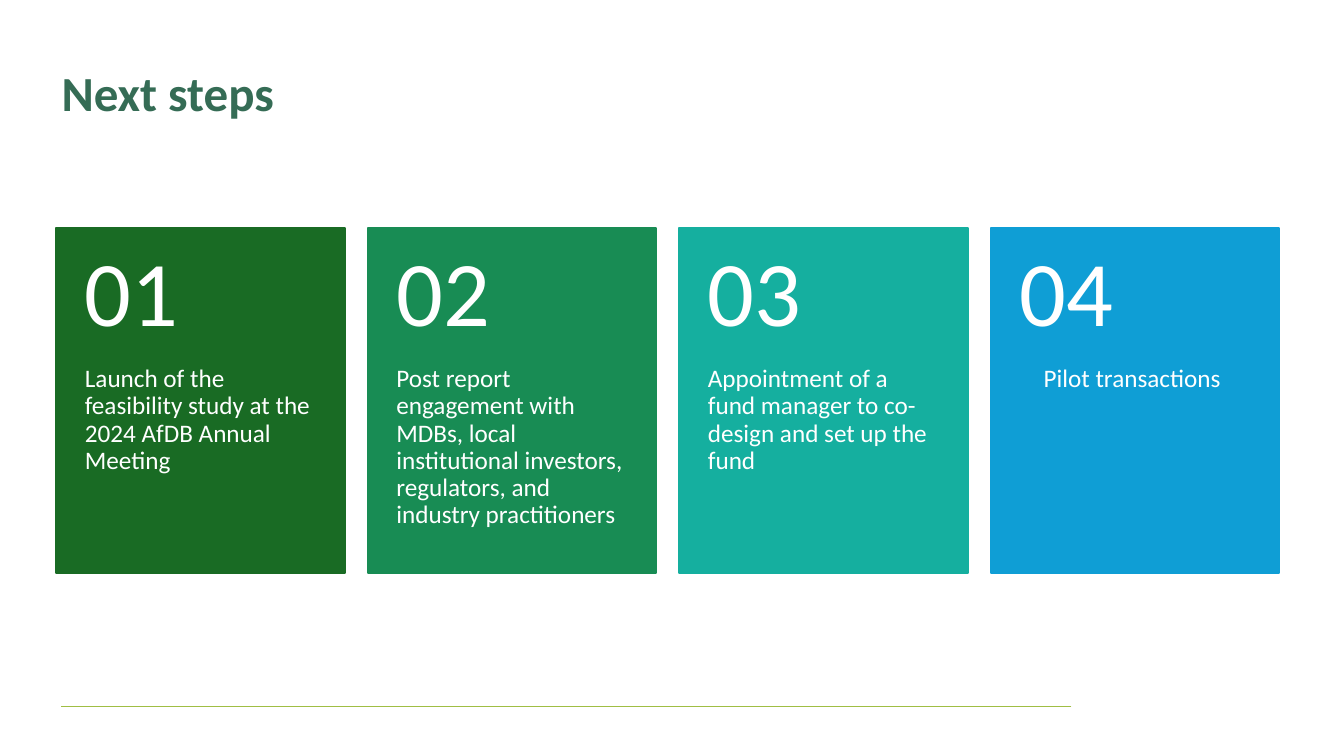
from dataclasses import dataclass
from lxml import etree
from pptx import Presentation
from pptx import util as u
from pptx.dml.color import RGBColor as Rgb
from pptx.enum import shapes, text


@dataclass
class Theme:
    font: str = "Calibri"
    title: str = "356C55"
    rule: str = "A0BE44"
    white: str = "FFFFFF"
    cards: tuple = ("196B24", "188C54", "15AF9F", "0F9ED5")
    head: int = 35
    digit: int = 66
    body: int = 18


theme = Theme()


def write(frame, words, size, color, pads, anchor, align, bold=False):
    frame.word_wrap = True
    frame.auto_size = text.MSO_AUTO_SIZE.NONE
    frame.vertical_anchor = anchor
    frame.margin_left = frame.margin_right = u.Cm(pads[0])
    frame.margin_top, frame.margin_bottom = u.Cm(pads[1]), u.Cm(pads[2])
    para = frame.paragraphs[0]
    para.alignment = align
    para.line_spacing = 0.9
    run = para.add_run()
    run.text = words
    run.font.name = theme.font
    run.font.size = u.Pt(size)
    run.font.bold = bold
    run.font.color.rgb = Rgb.from_string(color)


deck = Presentation()
deck.slide_width, deck.slide_height = u.Cm(33.87), u.Cm(19.05)
slide = deck.slides.add_slide(deck.slide_layouts[5])
items = slide.shapes
top, left = text.MSO_ANCHOR.TOP, text.PP_ALIGN.LEFT

rule = items.add_connector(shapes.MSO_CONNECTOR.STRAIGHT,
                           u.Cm(27), u.Cm(17.81), u.Cm(1.53), u.Cm(17.81))
rule.line.color.rgb = Rgb.from_string(theme.rule)
rule.line.width = u.Pt(0.6)
props = rule._element.spPr
etree.SubElement(props, props.tag.replace("/presentationml/", "/drawingml/")
                 .replace("spPr", "effectLst"))

title = items.title
title.left, title.top = u.Cm(1.55), u.Cm(1.75)
title.width, title.height = u.Cm(26.26), u.Cm(1.85)
write(title.text_frame, "Next steps", theme.head, theme.title,
      (0, 0, 0), top, left, True)

steps = [
    ("Launch of the feasibility study at the 2024 AfDB Annual Meeting", left),
    ("Post report engagement with MDBs, local institutional investors, "
     "regulators, and industry practitioners", left),
    ("Appointment of a fund manager to co-design and set up the fund", left),
    ("Pilot transactions ", text.PP_ALIGN.CENTER),
]
wide, high, cut, step = u.Cm(7.27), u.Cm(8.71), u.Cm(3.48), u.Cm(7.85)
y = u.Cm(5.74)

for i, ((words, align), color) in enumerate(zip(steps, theme.cards)):
    x = u.Cm(1.42) + i * step
    card = items.add_shape(shapes.MSO_SHAPE.RECTANGLE, x, y, wide, high)
    card.shadow.inherit = False
    card.fill.solid()
    card.fill.fore_color.rgb = Rgb.from_string(color)
    card.line.color.rgb = Rgb.from_string(color)
    card.line.width = u.Pt(1.5)

    body = items.add_textbox(x, y + cut, wide, high - cut)
    write(body.text_frame, words, theme.body, theme.white,
          (0.72, 0, 0.91), top, align)
    digit = items.add_textbox(x, y, wide, cut)
    write(digit.text_frame, f"{i + 1:02}", theme.digit, theme.white,
          (0.72, 0.46, 0.46), text.MSO_ANCHOR.MIDDLE, left)

deck.save("out.pptx")
